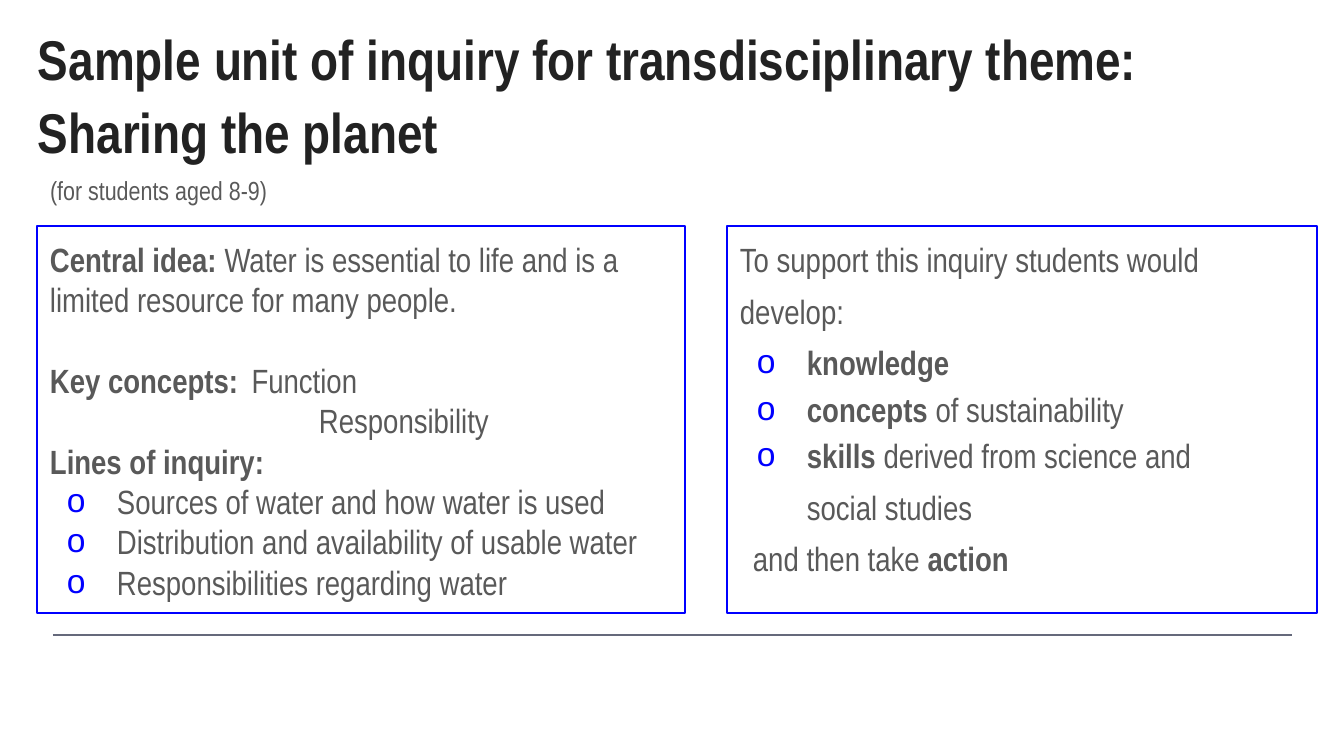
import lxml.etree
import pptx
import pptx.dml.color
import pptx.enum.shapes
import pptx.enum.text
import pptx.oxml.ns
import pptx.util

PX = 914400 / 134.4
FONT = "Arial Narrow"
BLUE, GREY, DARK = "0000FF", "595959", "222222"
qn = pptx.oxml.ns.qn


def color(hex_code):
    return pptx.dml.color.RGBColor.from_string(hex_code)


def write(shape, paragraphs, size, ink, padding):
    """Fill a shape with (runs, format) paragraphs; runs are (text, bold) pairs."""
    frame = shape.text_frame
    frame_format = {
        "word_wrap": True,
        "auto_size": pptx.enum.text.MSO_AUTO_SIZE.NONE,
        "vertical_anchor": pptx.enum.text.MSO_ANCHOR.TOP,
    }
    for side in ("left", "top", "right", "bottom"):
        frame_format["margin_" + side] = round(padding * PX)
    for name, value in frame_format.items():
        setattr(frame, name, value)

    for index, (runs, layout) in enumerate(paragraphs):
        paragraph = frame.add_paragraph() if index else frame.paragraphs[0]
        properties = paragraph._p.get_or_add_pPr()
        properties.set("marL", str(round(layout.get("margin", 0) * PX)))
        properties.set("indent", str(round(layout.get("indent", 0) * PX)))
        if layout.get("bullet"):
            bullet_color = lxml.etree.SubElement(properties, qn("a:buClr"))
            lxml.etree.SubElement(bullet_color, qn("a:srgbClr"), val=BLUE)
            lxml.etree.SubElement(properties, qn("a:buFont"), typeface="Arial")
            lxml.etree.SubElement(properties, qn("a:buChar"), char="o")
        else:
            lxml.etree.SubElement(properties, qn("a:buNone"))
        if "tab" in layout:
            tabs = lxml.etree.SubElement(properties, qn("a:tabLst"))
            lxml.etree.SubElement(tabs, qn("a:tab"), pos=str(round(layout["tab"] * PX)), algn="l")
        paragraph.alignment = pptx.enum.text.PP_ALIGN.LEFT
        paragraph.line_spacing = layout.get("spacing", 1.0)
        paragraph.space_before = pptx.util.Pt(layout.get("before", 0))
        for text, bold in runs:
            run = paragraph.add_run()
            run.text = text
            run_format = {"name": FONT, "size": pptx.util.Pt(size), "bold": bold}
            for name, value in run_format.items():
                setattr(run.font, name, value)
            run.font.color.rgb = color(ink)


presentation = pptx.Presentation()
presentation.slide_width = round(1344 * PX)
presentation.slide_height = round(756 * PX)
slide = presentation.slides.add_slide(presentation.slide_layouts[1])

# Rule at the foot of the slide
rule = slide.shapes.add_connector(
    pptx.enum.shapes.MSO_CONNECTOR.STRAIGHT,
    *(round(length * PX) for length in (53, 635, 1292, 635)))
rule.line.color.rgb = color("65697B")
rule.line.width = pptx.util.Pt(1)
lxml.etree.SubElement(rule._element.spPr, qn("a:effectLst"))

# Two-line heading in the title and body placeholders
headings = [
    (slide.shapes.title, "Sample unit of inquiry for transdisciplinary theme:", (38, 24, 1243, 74)),
    (slide.placeholders[1], "Sharing the planet", (38, 98, 406, 58)),
]
for placeholder, text, box in headings:
    for name, length in zip(("left", "top", "width", "height"), box):
        setattr(placeholder, name, round(length * PX))
    write(placeholder, [([(text, True)], {})], 30, DARK, 0)

age_note = slide.shapes.add_textbox(*(round(length * PX) for length in (37, 161, 262, 60)))
write(age_note, [([("(for students aged 8-9)", False)], {})], 14, GREY, 13)

# Two outlined panels
bullet = {"margin": 67, "indent": -50, "bullet": True}
loose = {"spacing": 1.15, "before": 2.8}
inquiry = [
    ([("Central idea: ", True),
      ("Water is essential to life and is a limited resource for many people.", False)], {}),
    ([("Key concepts:\t", True), ("Function", False)], {"tab": 269, "before": 21.6}),
    ([("Responsibility", False)], {"margin": 269}),
    ([("Lines of inquiry:", True)], {}),
    ([("Sources of water and how water is used", False)], bullet),
    ([("Distribution and availability of usable water", False)], bullet),
    ([("Responsibilities regarding water", False)], bullet),
]
support = [
    ([("To support this inquiry students would", False)], {}),
    ([("develop:", False)], loose),
    ([("knowledge", True)], {**bullet, **loose}),
    ([("concepts", True), (" of sustainability", False)], {**bullet, "spacing": 1.15}),
    ([("skills ", True), ("derived from science and", False)], {**bullet, "spacing": 1.15}),
    ([("social studies", False)], {**loose, "margin": 67}),
    ([("and then take ", False), ("action", True)], {**loose, "margin": 13}),
]
for left, width, paragraphs in [(37, 648, inquiry), (727, 590, support)]:
    panel = slide.shapes.add_shape(
        pptx.enum.shapes.MSO_SHAPE.RECTANGLE,
        *(round(length * PX) for length in (left, 226, width, 387)))
    panel.shadow.inherit = False
    panel.fill.background()
    panel.line.color.rgb = color(BLUE)
    panel.line.width = pptx.util.Pt(0.75)
    write(panel, paragraphs, 18, GREY, 13)

presentation.save("out.pptx")
